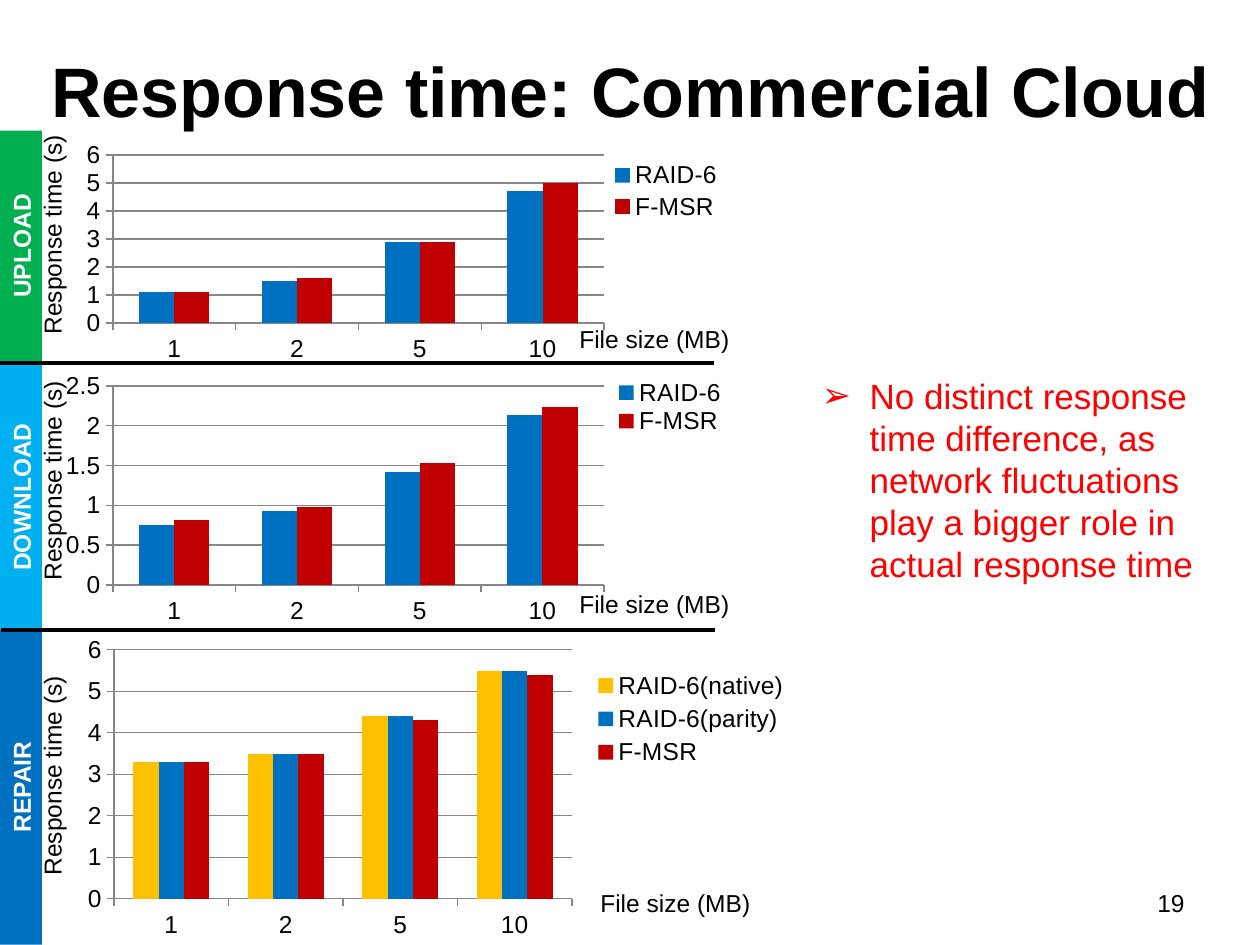
from dataclasses import dataclass
from lxml.etree import SubElement
from pptx import Presentation
from pptx.chart.data import CategoryChartData
from pptx.dml.color import RGBColor
from pptx.enum.chart import XL_CHART_TYPE, XL_LEGEND_POSITION, XL_TICK_MARK
from pptx.enum.shapes import MSO_CONNECTOR, MSO_SHAPE
from pptx.enum.text import MSO_ANCHOR, PP_ALIGN
from pptx.oxml.ns import qn
from pptx.util import Emu, Pt


@dataclass(frozen=True)
class Theme:
    face: str = "Arial"
    black: str = "000000"
    white: str = "FFFFFF"
    red: str = "FF0000"
    gray: str = "878787"
    green: str = "00B050"
    sky: str = "00B0F0"
    blue: str = "0070C0"
    crimson: str = "C00000"
    gold: str = "FFC000"
    title: int = 40
    body: int = 20
    small: int = 14


def px(n):
    return Emu(round(n * 914400 / 126))


def rgb(code):
    return RGBColor.from_string(code)


class Deck:
    def __init__(self, theme):
        self.theme = theme
        self.file = Presentation()
        self.file.slide_width, self.file.slide_height = px(1260), px(945)
        self.slide = self.file.slides.add_slide(self.file.slide_layouts[1])

    def font(self, font, size, color, bold=False):
        font.name, font.size, font.bold = self.theme.face, Pt(size), bold
        font.color.rgb = rgb(color)

    def place(self, shape, box):
        shape.left, shape.top, shape.width, shape.height = map(px, box)

    def title(self, text, box):
        shape = self.slide.shapes.title
        self.place(shape, box)
        frame = shape.text_frame
        frame.text, frame.vertical_anchor = text, MSO_ANCHOR.MIDDLE
        para = frame.paragraphs[0]
        para.alignment = PP_ALIGN.CENTER
        self.font(para.font, self.theme.title, self.theme.black, True)

    def body(self, text, box):
        shape = self.slide.placeholders[1]
        self.place(shape, box)
        shape.text_frame.text = text
        para = shape.text_frame.paragraphs[0]
        para.space_before = Pt(10)
        self.font(para.font, self.theme.body, self.theme.red)
        props = para._p.get_or_add_pPr()
        props.set("marL", str(px(48)))
        props.set("indent", str(-px(48)))
        mark = props.makeelement(qn("a:buChar"), {"char": "➢"})
        props.insert_element_before(mark, "a:tabLst", "a:defRPr", "a:extLst")

    def label(self, text, box, align=PP_ALIGN.LEFT, turn=0, wrap=False):
        shape = self.slide.shapes.add_textbox(*map(px, box))
        shape.rotation = turn
        frame = shape.text_frame
        frame.text, frame.word_wrap = text, wrap
        para = frame.paragraphs[0]
        para.alignment = align
        self.font(para.font, self.theme.small, self.theme.black)

    def band(self, text, mid, size, color):
        wide, high = size
        box = mid[0] - wide / 2, mid[1] - high / 2, wide, high
        shape = self.slide.shapes.add_shape(MSO_SHAPE.RECTANGLE, *map(px, box))
        shape.rotation = 270
        shape.shadow.inherit = False
        shape.fill.solid()
        shape.fill.fore_color.rgb = rgb(color)
        shape.line.fill.background()
        frame = shape.text_frame
        frame.text, frame.word_wrap = text, True
        frame.vertical_anchor = MSO_ANCHOR.MIDDLE
        para = frame.paragraphs[0]
        para.alignment = PP_ALIGN.CENTER
        self.font(para.font, self.theme.small, self.theme.white, True)

    def rule(self, left, top, wide):
        line = self.slide.shapes.add_connector(
            MSO_CONNECTOR.STRAIGHT, px(left), px(top), px(left + wide), px(top))
        line.line.color.rgb = rgb(self.theme.black)
        line.line.width = Pt(2)
        SubElement(line._element.spPr, qn("a:effectLst"))

    def layout(self, node, spot, box, area, inner=False):
        for old in node.findall(qn("c:layout")):
            node.remove(old)
        outer = node.makeelement(qn("c:layout"), {})
        node.insert(spot, outer)
        form = SubElement(outer, qn("c:manualLayout"))
        if inner:
            SubElement(form, qn("c:layoutTarget"), val="inner")
        for name in ("xMode", "yMode"):
            SubElement(form, qn(f"c:{name}"), val="edge")
        left, top, wide, high = area
        parts = {"x": (left - box[0]) / box[2], "y": (top - box[1]) / box[3],
                 "w": wide / box[2], "h": high / box[3]}
        for name, part in parts.items():
            SubElement(form, qn(f"c:{name}"), val=f"{part:.4f}")

    def chart(self, box, plot, key, top, step, rows):
        data = CategoryChartData()
        data.categories = ["1", "2", "5", "10"]
        for name, _, vals in rows:
            data.add_series(name, vals)
        chart = self.slide.shapes.add_chart(
            XL_CHART_TYPE.COLUMN_CLUSTERED, *map(px, box), data).chart
        self.font(chart.font, self.theme.small, self.theme.black)
        chart.has_title = False
        chart.has_legend = True
        chart.legend.position = XL_LEGEND_POSITION.RIGHT
        chart.legend.include_in_layout = False
        self.font(chart.legend.font, self.theme.small, self.theme.black)
        bars = chart.plots[0]
        bars.gap_width, bars.vary_by_categories = 150, False
        for item, (_, color, _) in zip(bars.series, rows):
            item.format.fill.solid()
            item.format.fill.fore_color.rgb = rgb(color)
        scale = chart.value_axis
        scale.minimum_scale, scale.maximum_scale = 0, top
        scale.major_unit, scale.has_major_gridlines = step, True
        for axis in (chart.category_axis, scale):
            axis.major_tick_mark = XL_TICK_MARK.OUTSIDE
            self.font(axis.tick_labels.font, self.theme.small, self.theme.black)
        for part in (chart.category_axis, scale, scale.major_gridlines):
            part.format.line.color.rgb = rgb(self.theme.gray)
            part.format.line.width = Pt(0.75)
        area = chart._chartSpace.chart.plotArea
        self.layout(area, 0, box, plot, True)
        self.layout(chart.legend._element, 1, box, key)


def main():
    look = Theme()
    deck = Deck(look)
    deck.title("Response time: Commercial Cloud", (32, 10, 1197, 158))
    deck.body("No distinct response time difference, as network fluctuations "
              "play a bigger role in actual response time", (809, 368, 451, 258))
    deck.label("19", (903, 882, 294, 44), PP_ALIGN.RIGHT, wrap=True)
    bands = [
        ("UPLOAD", 246, 231, look.green, 234, (567, 318)),
        ("DOWNLOAD", 497, 265, look.sky, 480, (567, 583)),
        ("REPAIR", 787, 315, look.blue, 775, (588, 882)),
    ]
    for name, mid, span, color, row, spot in bands:
        deck.label("File size (MB)", (*spot, 176, 43))
        deck.label("Response time (s)", (-60, row - 21, 225, 43), turn=270)
        deck.band(name, (21, mid), (span, 42), color)
    deck.rule(0, 363, 714)
    deck.rule(1, 630, 714)
    deck.chart((73, 136, 672, 231), (113, 155, 491, 168), (606, 158, 120, 66), 6, 1, [
        ("RAID-6", look.blue, (1.1, 1.5, 2.9, 4.7)),
        ("F-MSR", look.crimson, (1.1, 1.6, 2.9, 5)),
    ])
    deck.chart((53, 368, 693, 262), (113, 386, 491, 199), (610, 378, 120, 58), 2.5, 0.5, [
        ("RAID-6", look.blue, (0.75, 0.93, 1.42, 2.14)),
        ("F-MSR", look.crimson, (0.81, 0.98, 1.53, 2.24)),
    ])
    deck.chart((73, 630, 725, 315), (114, 650, 458, 249), (589, 666, 204, 106), 6, 1, [
        ("RAID-6(native)", look.gold, (3.3, 3.5, 4.4, 5.5)),
        ("RAID-6(parity)", look.blue, (3.3, 3.5, 4.4, 5.5)),
        ("F-MSR", look.crimson, (3.3, 3.5, 4.3, 5.4)),
    ])
    deck.file.save("out.pptx")


if __name__ == "__main__":
    main()
